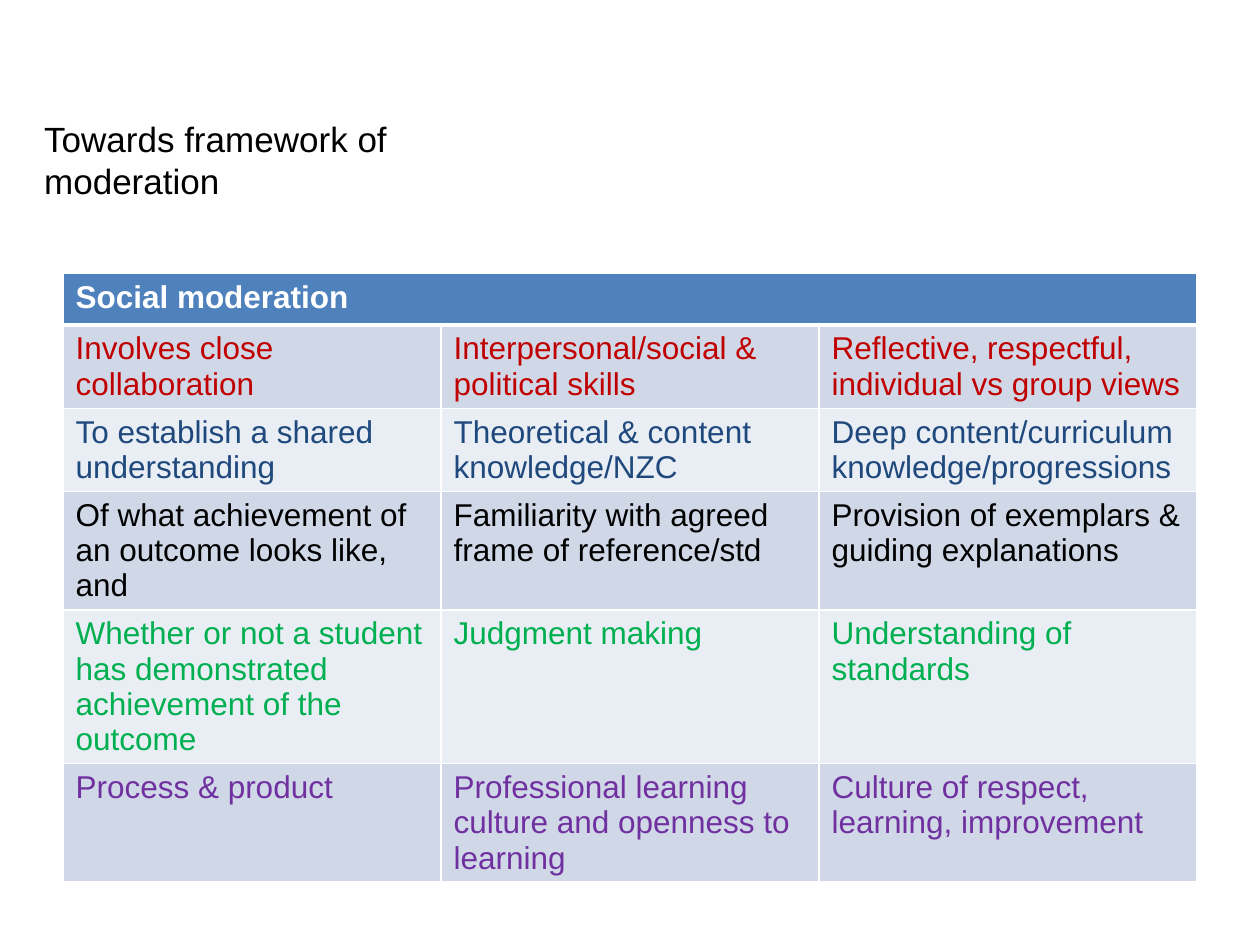
from lxml import etree
from pptx import Presentation
from pptx.dml.color import RGBColor
from pptx.enum import text
from pptx.oxml import ns
from pptx.util import Inches, Pt

WHITE = RGBColor(0xFF, 0xFF, 0xFF)
BLACK = RGBColor(0x00, 0x00, 0x00)
RED = RGBColor(0xC0, 0x00, 0x00)
NAVY = RGBColor(0x1F, 0x49, 0x7D)
GREEN = RGBColor(0x00, 0xB0, 0x50)
PURPLE = RGBColor(0x70, 0x30, 0xA0)
HEADER_BLUE = RGBColor(0x4F, 0x81, 0xBD)
BANDS = (RGBColor(0xD0, 0xD8, 0xE8), RGBColor(0xE9, 0xED, 0xF4))

TITLE = "Towards framework of moderation"
HEADING = "Social moderation"
ASPECTS = [
    (RED, ("Involves close collaboration",
           "Interpersonal/social & political skills",
           "Reflective, respectful, individual vs group views")),
    (NAVY, ("To establish a shared understanding",
            "Theoretical & content knowledge/NZC",
            "Deep content/curriculum knowledge/progressions")),
    (BLACK, ("Of what achievement of an outcome looks like, and",
             "Familiarity with agreed frame of reference/std",
             "Provision of exemplars & guiding explanations")),
    (GREEN, ("Whether or not a student has demonstrated achievement of the outcome",
             "Judgment making",
             "Understanding of standards")),
    (PURPLE, ("Process & product",
              "Professional learning culture and openness to learning",
              "Culture of respect, learning, improvement")),
]
COLUMNS = 3
COLUMN_WIDTH = Inches(3)
ROW_HEIGHT = Inches(0.41)


def format_font(font, color, **values):
    for name, value in {"name": "Arial", "bold": False, **values}.items():
        setattr(font, name, value)
    font.color.rgb = color


def set_borders(cell, **widths):
    properties = cell._tc.get_or_add_tcPr()
    for position, side in enumerate("LRTB"):
        line = etree.Element(ns.qn(f"a:ln{side}"), w=str(Pt(widths.get(side, 1))))
        solid = etree.SubElement(line, ns.qn("a:solidFill"))
        etree.SubElement(solid, ns.qn("a:srgbClr"), val=str(WHITE))
        properties.insert(position, line)


def format_cell(cell, wording, fill, color, bold=False, **widths):
    cell.fill.solid()
    cell.fill.fore_color.rgb = fill
    set_borders(cell, **widths)
    paragraph = cell.text_frame.paragraphs[0]
    if wording:
        format_font_run = paragraph.add_run()
        format_font_run.text = wording
        format_font(format_font_run.font, color, size=Pt(18), bold=bold)


def add_title(slide):
    title = slide.shapes.title
    place = {"left": 0.25, "top": 0.83, "width": 3.83, "height": 0.87}
    for name, value in place.items():
        setattr(title, name, Inches(value))
    frame = title.text_frame
    frame.text = TITLE
    frame.word_wrap = True
    frame.vertical_anchor = text.MSO_ANCHOR.MIDDLE
    paragraph = frame.paragraphs[0]
    paragraph.alignment = text.PP_ALIGN.LEFT
    format_font(paragraph.runs[0].font, BLACK, size=Pt(20))


def add_framework(slide):
    rows = len(ASPECTS) + 1
    framework = slide.shapes.add_table(
        rows, COLUMNS, Inches(0.5), Inches(2.17),
        COLUMN_WIDTH * COLUMNS, ROW_HEIGHT * rows).table
    for column in range(COLUMNS):
        format_cell(framework.cell(0, column), "" if column else HEADING,
                    HEADER_BLUE, WHITE, bold=True, B=3)
    framework.cell(0, 0).merge(framework.cell(0, COLUMNS - 1))
    for row, (color, aspects) in enumerate(ASPECTS, 1):
        for column, aspect in enumerate(aspects):
            format_cell(framework.cell(row, column), aspect,
                        BANDS[(row - 1) % 2], color, T=3 if row == 1 else 1)


def main():
    deck = Presentation()
    deck.slide_width, deck.slide_height = Inches(10), Inches(7.5)
    slide = deck.slides.add_slide(deck.slide_layouts[5])
    add_title(slide)
    add_framework(slide)
    deck.save("out.pptx")


if __name__ == "__main__":
    main()
